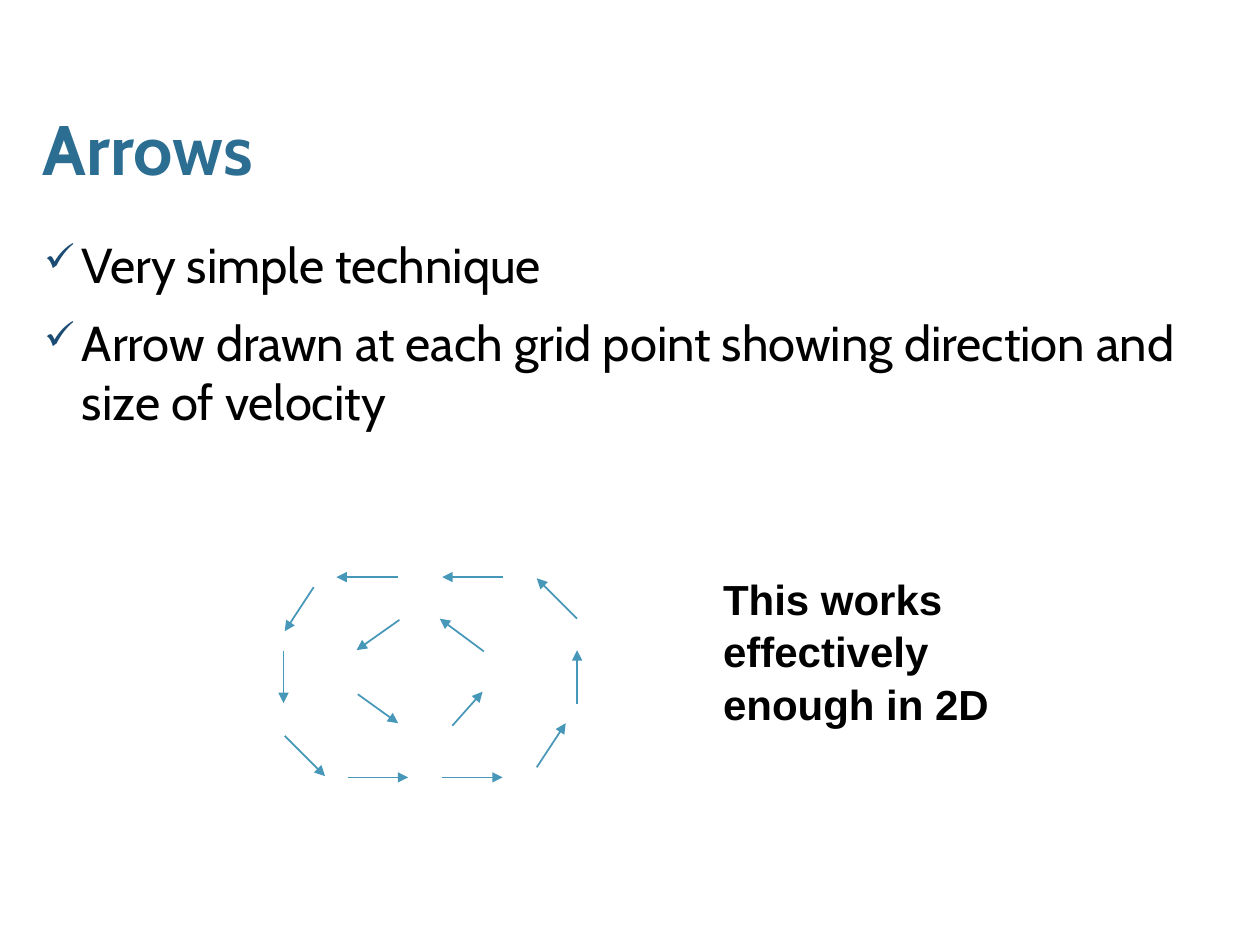
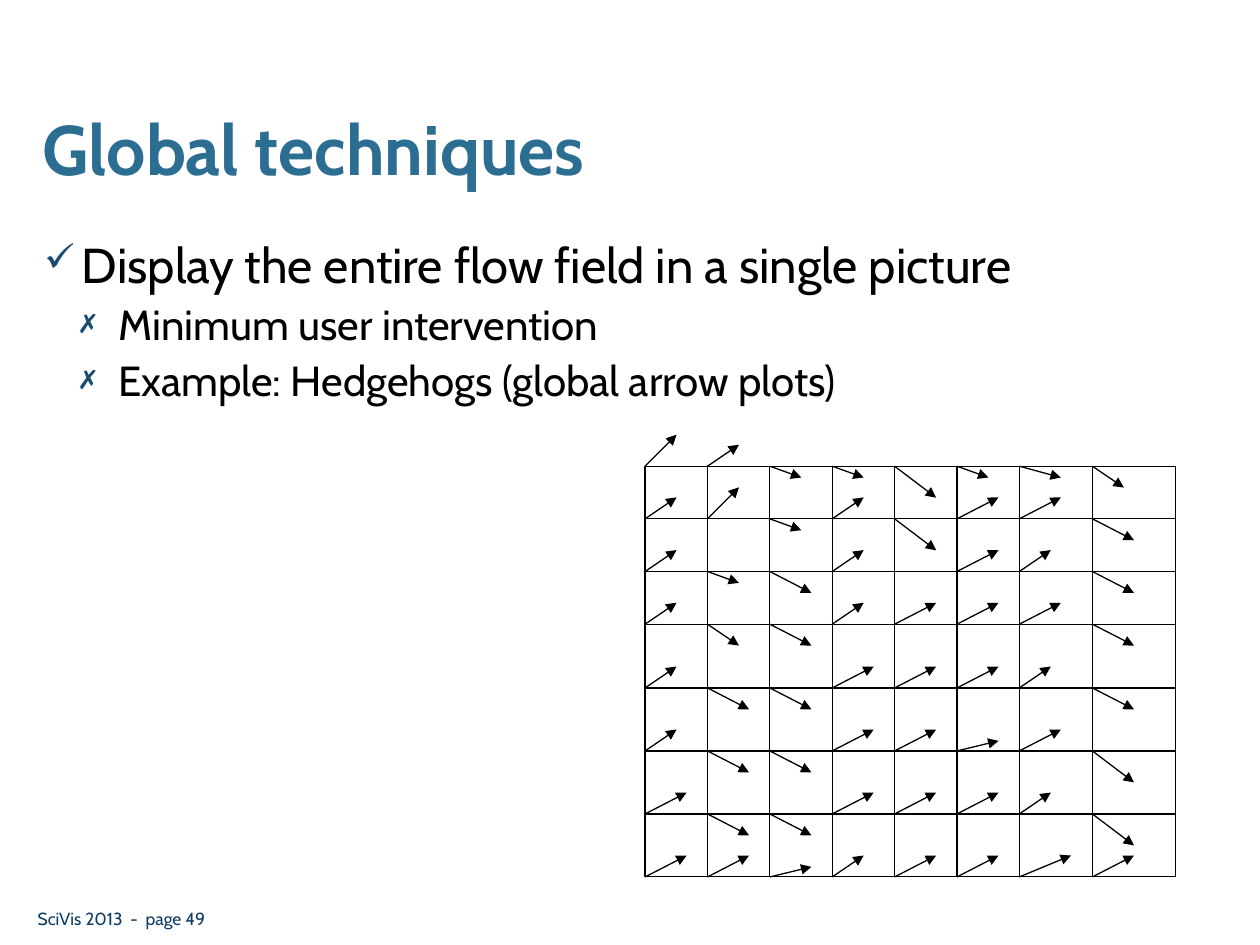
from dataclasses import dataclass

from lxml import etree
from pptx import Presentation
from pptx.dml.color import RGBColor
from pptx.enum import shapes, text
from pptx.oxml import ns
from pptx.util import Inches, Pt


@dataclass(frozen=True)
class Theme:
    heading: str = "2C6D92"
    ink: str = "000000"
    bullet: str = "1C4C74"
    footer: str = "0D3D65"
    flow: str = "4797B9"
    font: str = "Cabin"
    callout_font: str = "Arial"
    title_size: int = 40
    body_size: int = 28
    sub_size: int = 24
    footer_size: int = 10
    flow_width: float = 1
    grid_width: float = 0.75


THEME = Theme()

# bullet mark, left margin, type size, space before, for each level
LEVELS = [("✓", 0.3, THEME.body_size, 11), ("✗", 0.59, THEME.sub_size, 3)]
HANGING = 0.3

# start and tip of each arrow
SWIRL = [
    ((3.16, 4.58), (2.67, 4.58)), ((3.99, 4.58), (3.51, 4.58)),
    ((4.58, 4.91), (4.26, 4.59)), ((2.49, 4.66), (2.26, 5.01)),
    ((2.25, 5.17), (2.25, 5.58)), ((2.26, 5.84), (2.58, 6.16)),
    ((2.76, 6.17), (3.24, 6.17)), ((3.51, 6.17), (3.99, 6.17)),
    ((4.26, 6.09), (4.49, 5.74)), ((4.58, 5.59), (4.58, 5.16)),
    ((3.17, 4.92), (2.83, 5.16)), ((2.84, 5.51), (3.16, 5.74)),
    ((3.59, 5.76), (3.83, 5.49)), ((3.84, 5.17), (3.49, 4.91)),
]

GRID_LEFT, GRID_TOP, GRID_RIGHT, GRID_BOTTOM = 5.12, 3.7, 9.33, 6.96
GRID_X = [GRID_LEFT + 0.495 * i for i in range(7)] + [8.67]
GRID_Y = [GRID_TOP + 0.418 * i for i in range(4)] + [5.46 + 0.5 * i for i in range(4)]

# velocity (dx, dy) for each letter of the flow field
VELOCITY = {
    "U": (0.25, -0.25), "u": (0.25, -0.17), "r": (0.33, -0.17),
    "R": (0.41, -0.17), "f": (0.33, -0.08), "s": (0.25, 0.09),
    "g": (0.33, 0.09), "d": (0.25, 0.17), "D": (0.33, 0.17), "S": (0.33, 0.25),
}
# one row per horizontal grid line, one letter per vertical line
FIELD = [
    "UussSsgd",
    "uUsuSrrD",
    "usDu.ruD",
    "udDurrrD",
    "uDDrrruD",
    "uDDrrfrS",
    "rDDrrruS",
    "rrfurrRr",
]


def rgb(color):
    return RGBColor.from_string(color)


def add_xml(parent, tag, **attrs):
    return etree.SubElement(parent, ns.qn(tag), attrs)


def add_text(slide, box, lines, size, color, font=THEME.font, bold=False,
             side_inset=0.1, line_spacing=None):
    """Add a wrapped box with one paragraph per line, and return its paragraphs."""
    tf = slide.shapes.add_textbox(*map(Inches, box)).text_frame
    frame = {"word_wrap": True, "auto_size": text.MSO_AUTO_SIZE.NONE,
             "margin_left": Inches(side_inset), "margin_right": Inches(side_inset)}
    for name, value in frame.items():
        setattr(tf, name, value)
    for i, line in enumerate(lines):
        p = tf.paragraphs[0] if i == 0 else tf.add_paragraph()
        p.line_spacing = line_spacing
        r = p.add_run()
        r.text = line
        for name, value in {"name": font, "size": Pt(size), "bold": bold}.items():
            setattr(r.font, name, value)
        r.font.color.rgb = rgb(color)
    return tf.paragraphs


def add_title(slide, title):
    add_text(slide, (0.34, 0.84, 9.31, 0.73), [title], THEME.title_size,
             THEME.heading, bold=True, side_inset=0, line_spacing=0.95)


def add_bullets(slide, items):
    """Add the body list from (level, line) pairs."""
    lines = [line for _, line in items]
    paragraphs = add_text(slide, (0.35, 1.81, 9.32, 4.98), lines,
                          THEME.body_size, THEME.ink, side_inset=0)
    for i, (p, (level, _)) in enumerate(zip(paragraphs, items)):
        mark, margin, size, gap = LEVELS[level]
        pPr = p._p.get_or_add_pPr()
        pPr.set("marL", str(Inches(margin)))
        pPr.set("indent", str(-Inches(HANGING)))
        add_xml(add_xml(pPr, "a:buClr"), "a:srgbClr", val=THEME.bullet)
        add_xml(pPr, "a:buSzPct", val="80000")
        add_xml(pPr, "a:buChar", char=mark)
        p.level = level
        p.space_before = Pt(gap if i else 0)
        p.runs[0].font.size = Pt(size)


def add_line(parent, start, end, color, width, arrow=False):
    sp = parent.shapes.add_connector(shapes.MSO_CONNECTOR.STRAIGHT,
                                     *map(Inches, (*start, *end)))
    sp.line.color.rgb = rgb(color)
    sp.line.width = Pt(width)
    if arrow:
        add_xml(sp.line._get_or_add_ln(), "a:tailEnd", type="triangle")
    add_xml(sp._element.spPr, "a:effectLst")


def add_hedgehog(slide):
    """Draw the grid and an arrow at each of its points."""
    group = slide.shapes.add_group_shape()
    style = (THEME.ink, THEME.grid_width)
    frame = group.shapes.add_shape(
        shapes.MSO_SHAPE.RECTANGLE, Inches(GRID_LEFT), Inches(GRID_TOP),
        Inches(GRID_RIGHT - GRID_LEFT), Inches(GRID_BOTTOM - GRID_TOP))
    frame.shadow.inherit = False
    frame.fill.background()
    frame.line.color.rgb = rgb(THEME.ink)
    frame.line.width = Pt(THEME.grid_width)
    for y in GRID_Y[1:-1]:
        add_line(group, (GRID_LEFT, y), (GRID_RIGHT, y), *style)
    for x in GRID_X[1:]:
        add_line(group, (x, GRID_TOP), (x, GRID_BOTTOM), *style)
    for y, row in zip(GRID_Y, FIELD):
        for x, letter in zip(GRID_X, row):
            if letter in VELOCITY:
                dx, dy = VELOCITY[letter]
                add_line(group, (x, y), (x + dx, y + dy), *style, arrow=True)


def add_content_slide(prs, title, items):
    slide = prs.slides.add_slide(prs.slide_layouts[6])
    add_title(slide, title)
    add_bullets(slide, items)
    return slide


def main():
    prs = Presentation()
    prs.slide_width, prs.slide_height = Inches(10), Inches(7.5)

    arrows = add_content_slide(prs, "Arrows", [
        (0, "Very simple technique"),
        (0, "Arrow drawn at each grid point showing direction and size of velocity"),
    ])
    for start, tip in SWIRL:
        add_line(arrows, start, tip, THEME.flow, THEME.flow_width, arrow=True)
    add_text(arrows, (5.64, 4.48, 3.56, 1.3),
             ["This works effectively", "enough in 2D"], THEME.sub_size, THEME.ink,
             font=THEME.callout_font, bold=True, line_spacing=1.05)

    techniques = add_content_slide(prs, "Global techniques", [
        (0, "Display the entire flow field in a single picture"),
        (1, "Minimum user intervention"),
        (1, "Example: Hedgehogs (global arrow plots)"),
    ])
    add_text(techniques, (0.2, 7.16, 3.02, 0.27), ["SciVis 2013  -  page 49"],
             THEME.footer_size, THEME.footer)
    add_hedgehog(techniques)

    prs.save("out.pptx")


if __name__ == "__main__":
    main()
